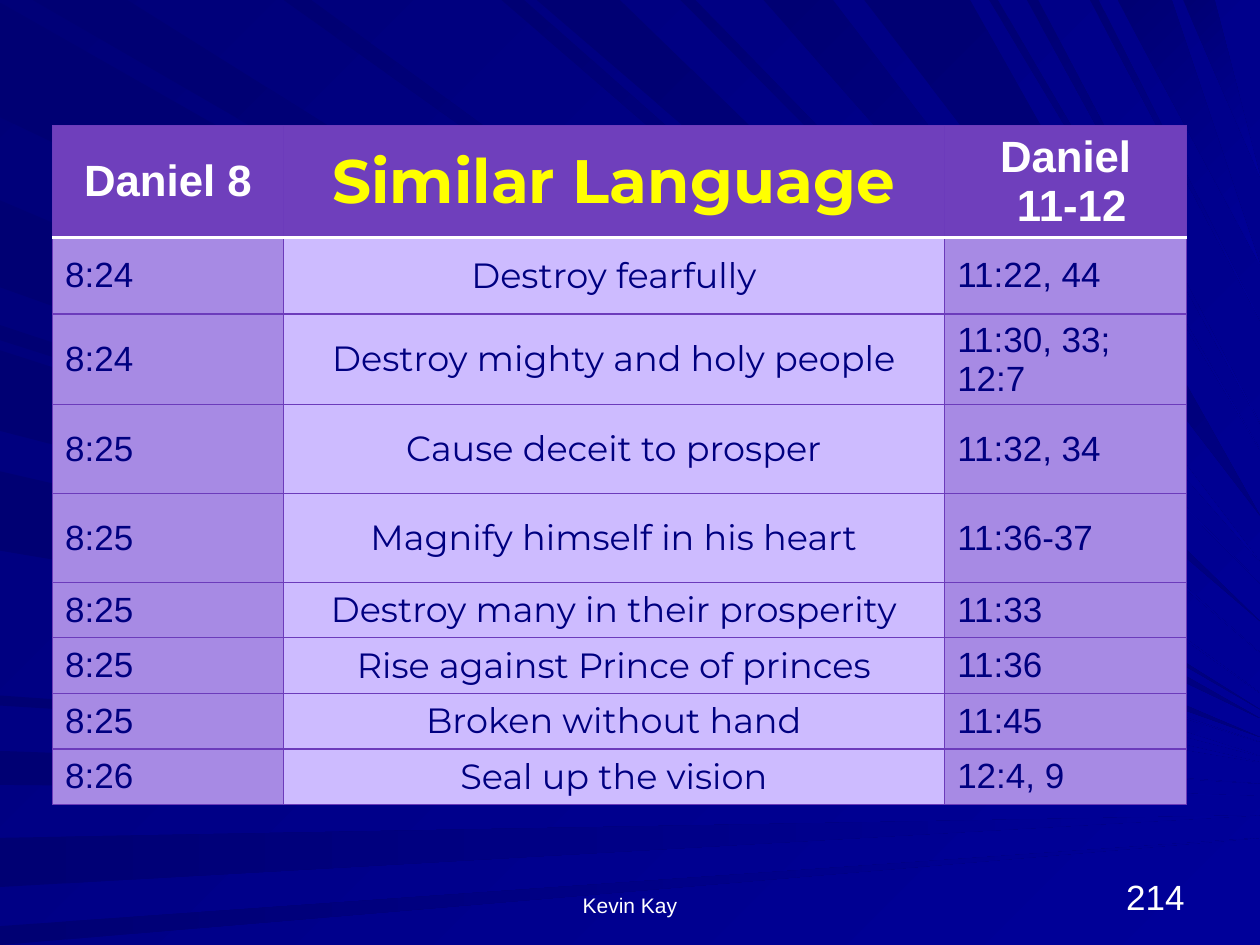
import lxml.etree
import pptx
import pptx.dml.color
import pptx.enum.text
import pptx.oxml.ns
import pptx.util

Cm, Pt = pptx.util.Cm, pptx.util.Pt
RGBColor = pptx.dml.color.RGBColor
ALIGN = pptx.enum.text.PP_ALIGN
ANCHOR = pptx.enum.text.MSO_ANCHOR
qn = pptx.oxml.ns.qn

NIGHT = RGBColor(0x00, 0x00, 0x78)
RAY_DARK = RGBColor(0x00, 0x00, 0x73)
NAVY = RGBColor(0x00, 0x00, 0x80)
BLUE = RGBColor(0x00, 0x00, 0x99)
WHITE = RGBColor(0xFF, 0xFF, 0xFF)
YELLOW = RGBColor(0xFF, 0xFF, 0x00)
PURPLE = RGBColor(0x6F, 0x3F, 0xBC)
BORDER = RGBColor(0x6C, 0x3B, 0xBB)
LILAC = RGBColor(0xA7, 0x8A, 0xE4)
PALE_LILAC = RGBColor(0xCD, 0xBB, 0xFF)

# Each light ray spans two positions on its edge and ends in a tip on the
# right edge; all are in thousandths of the slide width.
RAY_UNITS = 1000
WIDE_RAY = 65
LEFT_RAYS = [(2, 93, 570), (159, 228, 585), (258, 270, 589), (278, 342, 600),
             (374, 437, 605), (552, 560, 622), (596, 623, 632),
             (665, 704, 647), (735, 750, 665)]
TOP_RAYS = [(26, 101, 563), (225, 247, 550), (398, 416, 518), (426, 492, 493),
            (540, 552, 463), (606, 661, 446), (686, 770, 409), (785, 792, 357),
            (815, 824, 336), (865, 872, 254), (887, 930, 210), (939, 964, 140)]

HEADER = ["Daniel 8", "Similar Language", "Daniel\n 11-12"]
PARALLELS = [
    ("8:24", "Destroy fearfully", "11:22, 44"),
    ("8:24", "Destroy mighty and holy people", "11:30, 33; 12:7"),
    ("8:25", "Cause deceit to prosper", "11:32, 34"),
    ("8:25", "Magnify himself in his heart", "11:36-37"),
    ("8:25", "Destroy many in their prosperity", "11:33"),
    ("8:25", "Rise against Prince of princes", "11:36"),
    ("8:25", "Broken without hand", "11:45"),
    ("8:26", "Seal up the vision", "12:4, 9"),
]
COLUMN_SHARES = [1.83, 5.25, 1.92]
ROW_HEIGHTS = [2.26, 1.54, 1.83, 1.79, 1.79] + [1.12] * 4


def write(tf, text, size, color, font="Arial", bold=False, align=ALIGN.LEFT):
    """Fill the first paragraph; a newline becomes a line break."""
    p = tf.paragraphs[0]
    p.alignment = align
    for i, line in enumerate(text.split("\n")):
        if i:
            p.add_line_break()
        r = p.add_run()
        r.text = line
        r.font.name, r.font.size, r.font.bold = font, Pt(size), bold
        r.font.color.rgb = color


def set_gradient(fill, start, end, angle):
    fill.gradient()
    fill.gradient_angle = -angle % 360
    for stop, color in zip(fill.gradient_stops, (start, end)):
        stop.color.rgb = color


def add_ray(s, width, corners, end, angle):
    builder = s.shapes.build_freeform(*corners[0], scale=width / RAY_UNITS)
    builder.add_line_segments(corners[1:], close=True)
    sp = builder.convert_to_shape()
    sp.shadow.inherit = False
    sp.line.fill.background()
    set_gradient(sp.fill, RAY_DARK, end, angle)


def add_background(s, width):
    set_gradient(s.background.fill, NIGHT, BLUE, 45)
    for rays, from_top in ((LEFT_RAYS, False), (TOP_RAYS, True)):
        for first, last, tip in rays:
            base = [(pos, 0) if from_top else (0, pos) for pos in (first, last)]
            end = NAVY if last - first > WIDE_RAY else BLUE
            add_ray(s, width, base + [(RAY_UNITS, tip)], end, 45 if from_top else 0)


def set_borders(cell, **heavy):
    """Draw thin borders; heavy maps a side (L, R, T, B) to its colour."""
    tcPr = cell._tc.get_or_add_tcPr()
    for i, side in enumerate("LRTB"):
        color, weight = (heavy[side], 2) if side in heavy else (BORDER, 0.75)
        ln = lxml.etree.Element(qn(f"a:ln{side}"), w=str(Pt(weight)))
        fill = lxml.etree.SubElement(ln, qn("a:solidFill"))
        lxml.etree.SubElement(fill, qn("a:srgbClr"), val=str(color))
        tcPr.insert(i, ln)


def add_parallels_table(s, left, top, width):
    rows = [HEADER] + PARALLELS
    table = s.shapes.add_table(len(rows), len(HEADER), left, top, width,
                               Cm(sum(ROW_HEIGHTS))).table
    table.horz_banding = False
    for column, share in zip(table.columns, COLUMN_SHARES):
        column.width = int(width * share / sum(COLUMN_SHARES))
    for i, (texts, height) in enumerate(zip(rows, ROW_HEIGHTS)):
        table.rows[i].height = Cm(height)
        for j, text in enumerate(texts):
            cell, middle = table.cell(i, j), j == 1
            cell.vertical_anchor = ANCHOR.MIDDLE
            cell.fill.solid()
            font = "Montserrat" if middle else "Arial"
            if i == 0:
                cell.fill.fore_color.rgb = PURPLE
                write(cell.text_frame, text, 35 if middle else 25,
                      YELLOW if middle else WHITE, font, True, ALIGN.CENTER)
                set_borders(cell, B=WHITE)
            else:
                cell.fill.fore_color.rgb = PALE_LILAC if middle else LILAC
                write(cell.text_frame, text, 20, NAVY, font,
                      align=ALIGN.CENTER if middle else ALIGN.LEFT)
                set_borders(cell, **({"T": WHITE} if i == 1 else {}))


def add_footer_text(s, left, top, width, height, text, size, align):
    tf = s.shapes.add_textbox(left, top, width, height).text_frame
    tf.word_wrap = True
    tf.vertical_anchor = ANCHOR.BOTTOM
    write(tf, text, size, WHITE, align=align)


def main():
    prs = pptx.Presentation()
    prs.slide_width, prs.slide_height = Cm(25.4), Cm(19.05)
    s = prs.slides.add_slide(prs.slide_layouts[6])
    add_background(s, prs.slide_width)
    add_parallels_table(s, Cm(1.06), Cm(2.53), Cm(22.86))
    footer_top, footer_height = Cm(17.36), Cm(1.27)
    add_footer_text(s, Cm(18.2), footer_top, Cm(5.93), footer_height, "214", 20, ALIGN.RIGHT)
    add_footer_text(s, Cm(8.68), footer_top, Cm(8.04), footer_height, "Kevin Kay", 12, ALIGN.CENTER)
    prs.save("out.pptx")


if __name__ == "__main__":
    main()
